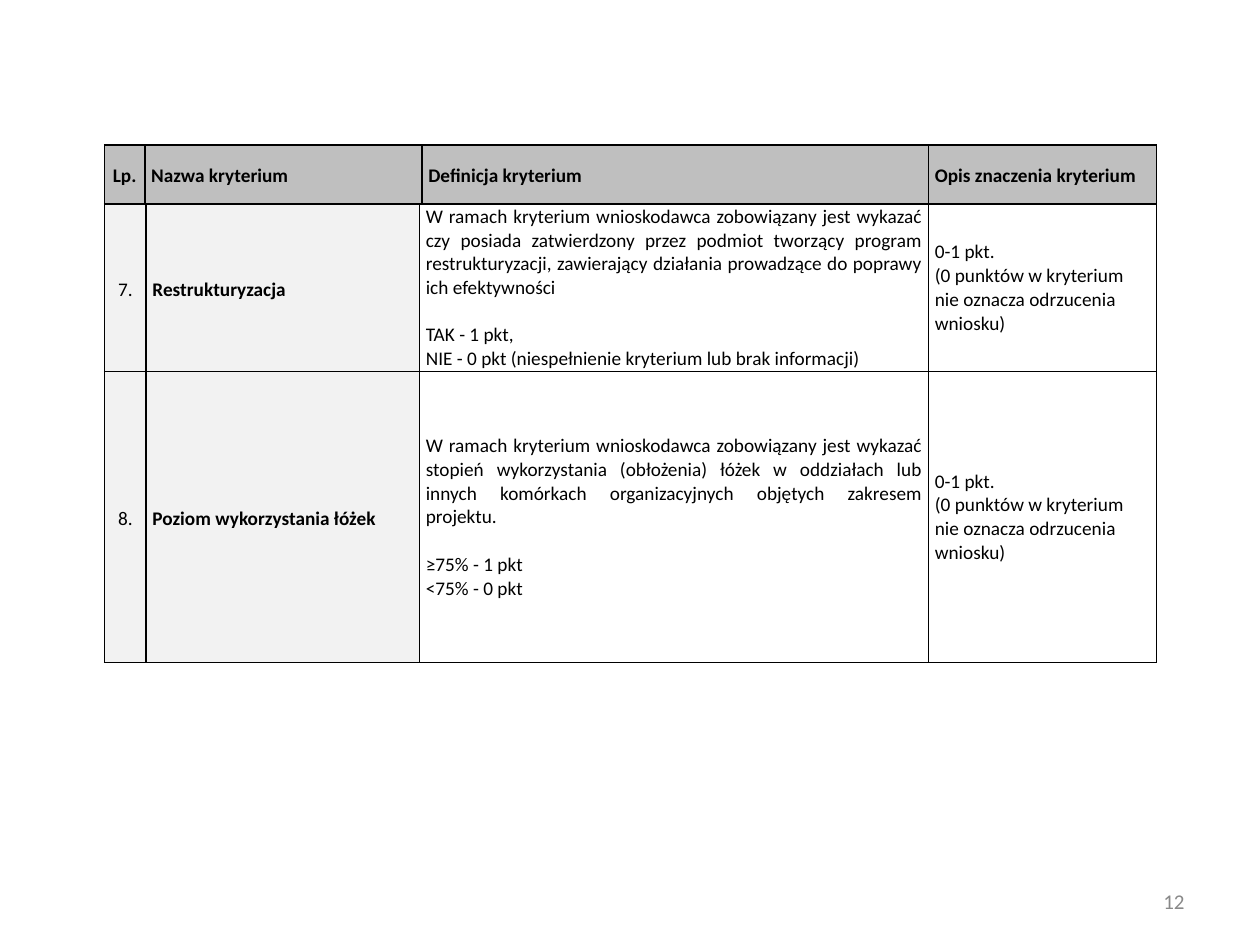
from dataclasses import dataclass

from lxml.etree import SubElement
from pptx import Presentation
from pptx.dml.color import RGBColor
from pptx.enum.text import MSO_ANCHOR as Anchor, PP_ALIGN as Align
from pptx.oxml.ns import qn
from pptx.util import Inches, Pt


@dataclass(frozen=True)
class Theme:
    font: str = "Calibri"
    text: str = "000000"
    border: str = "000000"
    header_fill: str = "BFBFBF"
    label_fill: str = "F2F2F2"
    page_number: str = "898989"
    table_size: int = 11
    number_size: int = 12
    border_width: int = 1


THEME = Theme()
TABLE_LEFT = 0.83

HEADINGS = ["Lp.", "Nazwa kryterium", "Definicja kryterium", "Opis znaczenia kryterium"]
MEANING = ["0-1 pkt.", "(0 punktów w kryterium", "nie oznacza odrzucenia wniosku)"]
# Number, name, definition, scores
CRITERIA = [
    ("7.", "Restrukturyzacja",
     "W ramach kryterium wnioskodawca zobowiązany jest wykazać czy posiada zatwierdzony "
     "przez podmiot tworzący program restrukturyzacji, zawierający działania prowadzące "
     "do poprawy ich efektywności",
     ["TAK - 1 pkt,", "NIE - 0 pkt (niespełnienie kryterium lub brak informacji)"]),
    ("8.", "Poziom wykorzystania łóżek",
     "W ramach kryterium wnioskodawca zobowiązany jest wykazać stopień wykorzystania "
     "(obłożenia) łóżek w oddziałach lub innych komórkach organizacyjnych objętych "
     "zakresem projektu.",
     ["≥75% - 1 pkt", "<75% - 0 pkt"]),
]


def format_font(font, size, color, bold=False):
    font.name = THEME.font
    font.size = Pt(size)
    font.bold = bold
    font.color.rgb = RGBColor.from_string(color)


def add_borders(cell):
    properties = cell._tc.get_or_add_tcPr()
    for side in ("a:lnL", "a:lnR", "a:lnT", "a:lnB"):
        line = SubElement(properties, qn(side), w=str(Pt(THEME.border_width)))
        fill = SubElement(line, qn("a:solidFill"))
        SubElement(fill, qn("a:srgbClr"), val=THEME.border)


def fill_cell(cell, lines, align=Align.LEFT, bold=False, fill=None):
    cell.margin_left = cell.margin_right = Inches(0.05)
    cell.margin_top = cell.margin_bottom = 0
    cell.vertical_anchor = Anchor.MIDDLE
    add_borders(cell)
    if fill:
        cell.fill.solid()
        cell.fill.fore_color.rgb = RGBColor.from_string(fill)
    else:
        cell.fill.background()
    cell.text_frame.text = "\n".join(lines)
    for paragraph in cell.text_frame.paragraphs:
        paragraph.alignment = align
        for run in paragraph.runs:
            format_font(run.font, THEME.table_size, THEME.text, bold)


def fill_label(cell, text, fill, align=Align.LEFT, bold=True):
    fill_cell(cell, [text], align, bold, fill)
    paragraph = cell.text_frame.paragraphs[0]
    paragraph.line_spacing = 1.15
    paragraph.space_after = Pt(10)


def add_grid(slide, top, widths, heights):
    frame = slide.shapes.add_table(
        len(heights), len(widths), Inches(TABLE_LEFT), Inches(top),
        Inches(sum(widths)), Inches(sum(heights)))
    table = frame.table
    table.first_row = table.horz_banding = False
    for column, width in zip(table.columns, widths):
        column.width = Inches(width)
    for row, height in zip(table.rows, heights):
        row.height = Inches(height)
    return table


def add_header(slide):
    table = add_grid(slide, 1.15, [0.32, 2.2, 4.02, 1.81], [0.47])
    for index, heading in enumerate(HEADINGS):
        align = Align.LEFT if index else Align.CENTER
        fill_label(table.cell(0, index), heading, THEME.header_fill, align)


def add_criteria(slide):
    # The first row is tall enough for its seven lines of text
    table = add_grid(slide, 1.62, [0.33, 2.17, 4.04, 1.81], [1.33, 2.31])
    for row, (number, name, definition, scores) in zip(table.rows, CRITERIA):
        number_cell, name_cell, definition_cell, meaning_cell = row.cells
        fill_label(number_cell, number, THEME.label_fill, Align.CENTER, bold=False)
        fill_label(name_cell, name, THEME.label_fill)
        fill_cell(definition_cell, [definition, *scores], Align.JUSTIFY)
        # One line of space sets the scores apart from the definition
        definition_cell.text_frame.paragraphs[1].space_before = Pt(13.5)
        fill_cell(meaning_cell, MEANING)


def add_page_number(slide, number):
    box = slide.shapes.add_textbox(Inches(7.17), Inches(6.95), Inches(2.33), Inches(0.4))
    frame = box.text_frame
    frame.word_wrap = True
    frame.vertical_anchor = Anchor.MIDDLE
    frame.text = number
    paragraph = frame.paragraphs[0]
    paragraph.alignment = Align.RIGHT
    format_font(paragraph.runs[0].font, THEME.number_size, THEME.page_number)


def main():
    presentation = Presentation()
    presentation.slide_width = Inches(10)
    presentation.slide_height = Inches(7.5)
    slide = presentation.slides.add_slide(presentation.slide_layouts[6])
    add_page_number(slide, "12")
    add_header(slide)
    add_criteria(slide)
    presentation.save("out.pptx")


if __name__ == "__main__":
    main()
